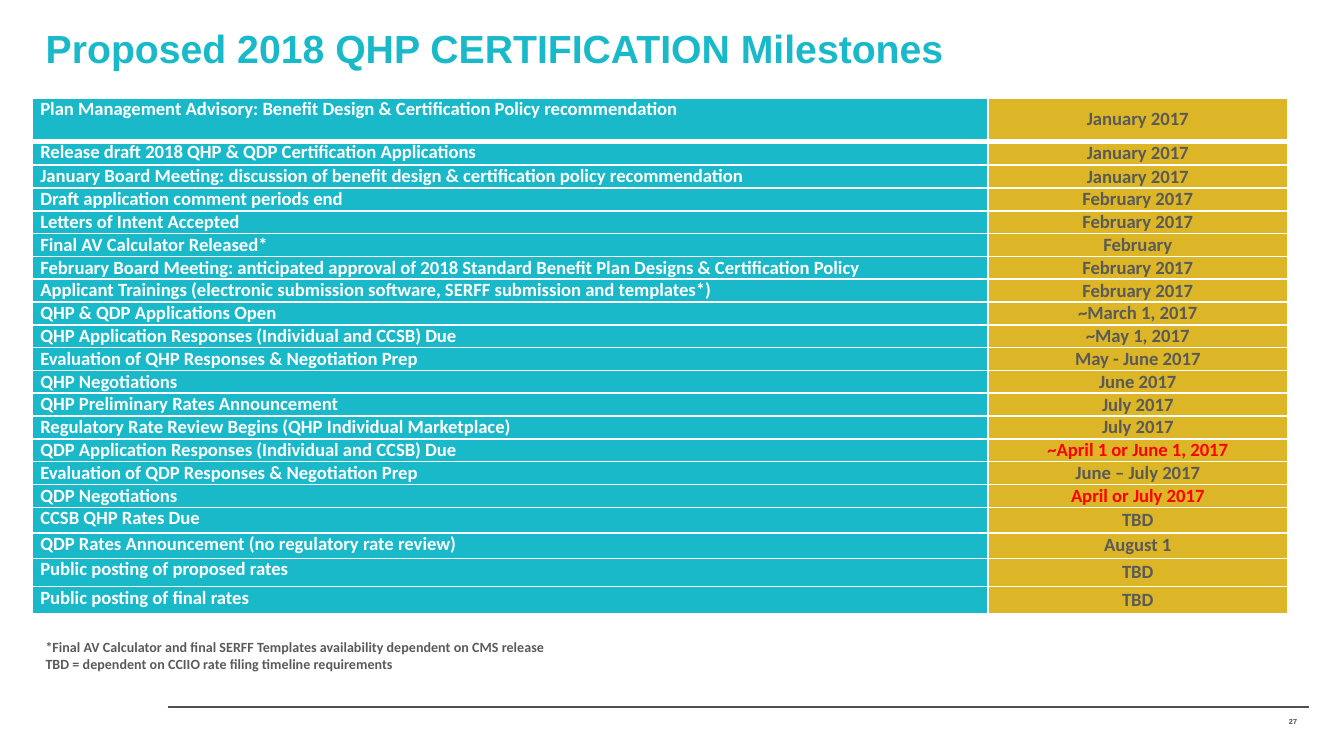
from dataclasses import dataclass

from lxml.etree import SubElement
from pptx import Presentation
from pptx.dml.color import RGBColor
from pptx.enum.shapes import MSO_CONNECTOR
from pptx.enum.text import MSO_ANCHOR, MSO_AUTO_SIZE, PP_ALIGN
from pptx.oxml.ns import qn
from pptx.util import Inches, Pt

COLORS = {
    "teal": "19B9CA",
    "gold": "DCB626",
    "gray": "5A5A59",
    "footer": "554D56",
    "red": "FF0000",
    "white": "FFFFFF",
}


@dataclass
class Milestone:
    activity: str
    date: str
    height: float = 0.17
    date_color: str = "gray"


MILESTONES = [
    Milestone("Plan Management Advisory: Benefit Design & Certification Policy recommendation",
              "January 2017", 0.32),
    Milestone("Release draft 2018 QHP & QDP Certification Applications", "January 2017", 0.18),
    Milestone("January Board Meeting: discussion of benefit design & certification policy "
              "recommendation", "January 2017"),
    Milestone("Draft application comment periods end", "February 2017"),
    Milestone("Letters of Intent Accepted", "February 2017"),
    Milestone("Final AV Calculator Released*", "February"),
    Milestone("February Board Meeting: anticipated approval of 2018 Standard Benefit Plan "
              "Designs & Certification Policy", "February 2017"),
    Milestone("Applicant Trainings (electronic submission software, SERFF submission and "
              "templates*)", "February 2017"),
    Milestone("QHP & QDP Applications Open", "~March 1, 2017"),
    Milestone("QHP Application Responses (Individual and CCSB) Due", "~May 1, 2017"),
    Milestone("Evaluation of QHP Responses & Negotiation Prep", "May - June 2017"),
    Milestone("QHP Negotiations", "June 2017"),
    Milestone("QHP Preliminary Rates Announcement", "July 2017"),
    Milestone("Regulatory Rate Review Begins (QHP Individual Marketplace)", "July 2017"),
    Milestone("QDP Application Responses (Individual and CCSB) Due",
              "~April 1 or June 1, 2017", date_color="red"),
    Milestone("Evaluation of QDP Responses & Negotiation Prep", "June – July 2017"),
    Milestone("QDP Negotiations", "April or July 2017", date_color="red"),
    Milestone("CCSB QHP Rates Due", "TBD", 0.19),
    Milestone("QDP Rates Announcement (no regulatory rate review)", "August 1", 0.19),
    Milestone("Public posting of proposed rates", "TBD", 0.21),
    Milestone("Public posting of final rates", "TBD", 0.2),
]
COLUMN_WIDTHS = (7.11, 2.23)
FOOTNOTES = [
    "*Final AV Calculator and final SERFF Templates availability dependent on CMS release",
    "TBD = dependent on CCIIO rate filing timeline requirements",
]


def rgb(name: str) -> RGBColor:
    return RGBColor.from_string(COLORS[name])


def format_paragraph(paragraph, size: float, font_name: str, color: str,
                     alignment=PP_ALIGN.LEFT) -> None:
    paragraph.alignment = alignment
    paragraph.font.size = Pt(size)
    paragraph.font.name = font_name
    paragraph.font.bold = True
    paragraph.font.color.rgb = rgb(color)


def set_borders(cell, bottom_width: float) -> None:
    properties = cell._tc.get_or_add_tcPr()
    for side, width in (("L", 1), ("R", 1), ("T", 1), ("B", bottom_width)):
        line = SubElement(properties, qn(f"a:ln{side}"), w=str(Pt(width)))
        fill = SubElement(line, qn("a:solidFill"))
        SubElement(fill, qn("a:srgbClr"), val=COLORS["white"])


def fill_cell(cell, text: str, fill: str, color: str, alignment, anchor,
              bottom_width: float) -> None:
    set_borders(cell, bottom_width)
    cell.fill.solid()
    cell.fill.fore_color.rgb = rgb(fill)
    cell.margin_left = cell.margin_right = Inches(0.06)
    cell.margin_top = cell.margin_bottom = 0
    cell.vertical_anchor = anchor
    cell.text = text
    format_paragraph(cell.text_frame.paragraphs[0], 10, "Calibri", color, alignment)


def add_milestone_table(slide) -> None:
    table = slide.shapes.add_table(
        len(MILESTONES), 2, Inches(0.24), Inches(0.73), Inches(sum(COLUMN_WIDTHS)),
        Inches(sum(milestone.height for milestone in MILESTONES))).table
    table.horz_banding = False
    for column, width in zip(table.columns, COLUMN_WIDTHS):
        column.width = Inches(width)
    for index, milestone in enumerate(MILESTONES):
        table.rows[index].height = Inches(milestone.height)
        bottom_width = 3 if index == 0 else 1
        fill_cell(table.cell(index, 0), milestone.activity, "teal", "white",
                  PP_ALIGN.LEFT, MSO_ANCHOR.TOP, bottom_width)
        fill_cell(table.cell(index, 1), milestone.date, "gold", milestone.date_color,
                  PP_ALIGN.CENTER, MSO_ANCHOR.MIDDLE, bottom_width)


def add_text(slide, left: float, top: float, width: float, height: float,
             lines: list[str], size: float, font_name: str, color: str,
             alignment=PP_ALIGN.LEFT):
    box = slide.shapes.add_textbox(Inches(left), Inches(top), Inches(width), Inches(height))
    frame = box.text_frame
    frame.word_wrap = True
    frame.text = "\n".join(lines)
    for paragraph in frame.paragraphs:
        format_paragraph(paragraph, size, font_name, color, alignment)
    return frame


def add_footer(slide) -> None:
    rule = slide.shapes.add_connector(MSO_CONNECTOR.STRAIGHT, Inches(1.25), Inches(5.26),
                                      Inches(9.74), Inches(5.26))
    rule.line.color.rgb = rgb("footer")
    rule.line.width = Pt(1)
    SubElement(rule._element.spPr, qn("a:effectLst"))
    number = add_text(slide, 8.95, 5.22, 0.8, 0.3, ["27"], 3.9, "Arial", "footer",
                      PP_ALIGN.RIGHT)
    number.vertical_anchor = MSO_ANCHOR.MIDDLE


def set_title(slide, text: str) -> None:
    title = slide.shapes.title
    title.left, title.top = Inches(0.24), Inches(0.13)
    title.width, title.height = Inches(8.43), Inches(0.57)
    frame = title.text_frame
    frame.text = text
    frame.vertical_anchor = MSO_ANCHOR.TOP
    format_paragraph(frame.paragraphs[0], 21, "Arial", "teal")


def main() -> None:
    presentation = Presentation()
    # Widescreen, 16 by 9
    presentation.slide_width = Inches(10)
    presentation.slide_height = Inches(10) * 9 // 16
    slide = presentation.slides.add_slide(presentation.slide_layouts[5])

    # Title, footer, schedule and footnotes
    set_title(slide, "Proposed 2018 QHP CERTIFICATION Milestones")
    add_footer(slide)
    add_milestone_table(slide)
    notes = add_text(slide, 0.24, 4.7, 5.19, 0.35, FOOTNOTES, 7.5, "Calibri", "gray")
    notes.auto_size = MSO_AUTO_SIZE.SHAPE_TO_FIT_TEXT

    presentation.save("out.pptx")


if __name__ == "__main__":
    main()
